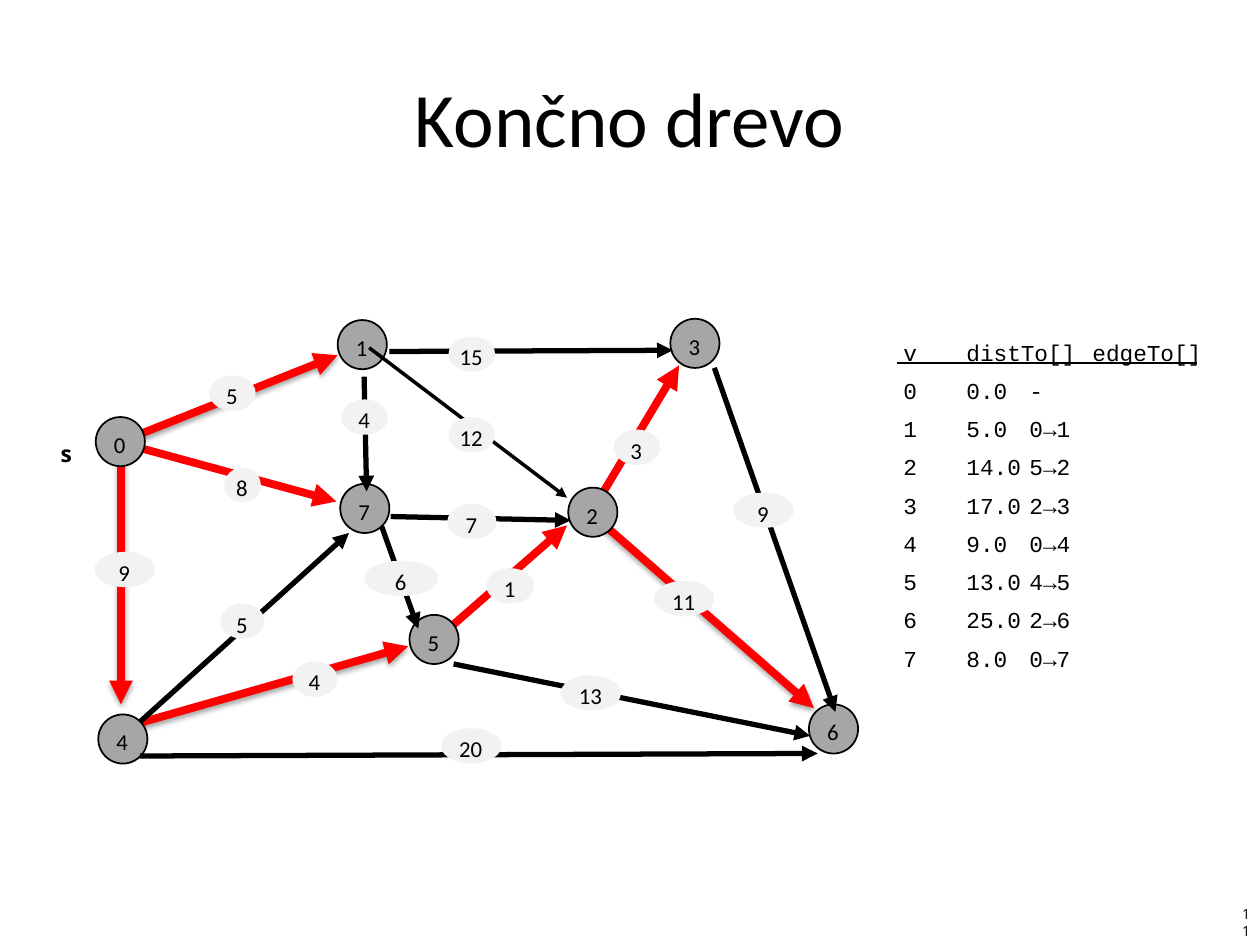
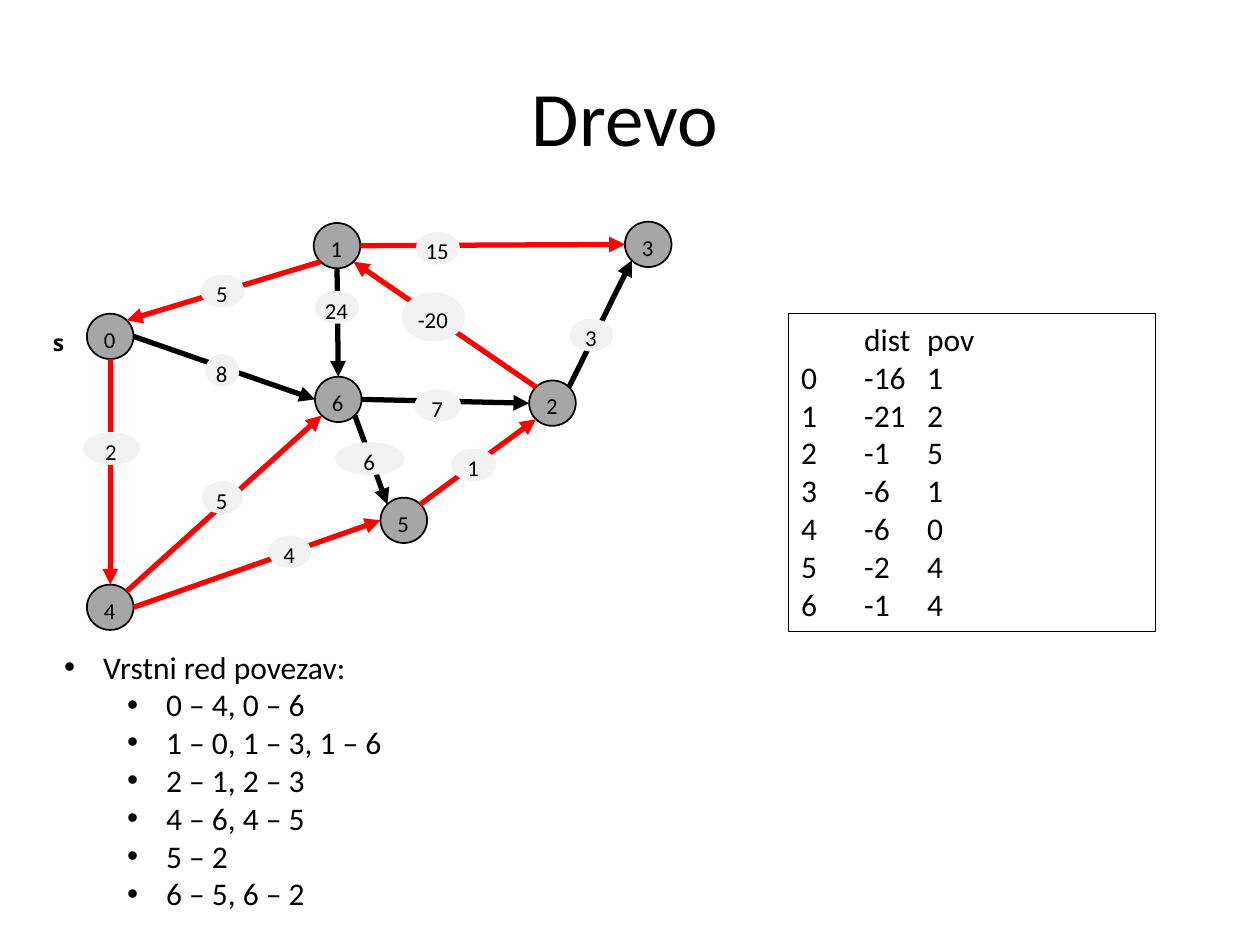
"""Build two slides that show shortest-path trees of weighted directed graphs."""
from math import sqrt
from lxml import etree
from pptx import Presentation, util as u
from pptx.dml.color import RGBColor
from pptx.enum import shapes, text
from pptx.oxml.ns import qn

COLOURS = {"ink": "000000", "tree": "FF0000", "node": "A6A6A6", "weight": "F2F2F2"}
BODY, MONO, SMALL = "Calibri", "Courier New", "Open Sans"
ALIGN, ANCHOR = text.PP_ALIGN, text.MSO_ANCHOR
DEFAULT_INSETS = (0.1, 0.05, 0.1, 0.05)
TIGHT_INSETS = (0, 0, 0.05, 0)
HANGING = 0.31
DIAGONAL = sqrt(0.5)
SITES = {
    "top": (0, 0, -1), "top left": (1, -DIAGONAL, -DIAGONAL),
    "left": (2, -1, 0), "bottom left": (3, -DIAGONAL, DIAGONAL),
    "bottom": (4, 0, 1), "bottom right": (5, DIAGONAL, DIAGONAL),
    "right": (6, 1, 0), "top right": (7, DIAGONAL, -DIAGONAL),
}

FINAL = {
    "title": ("Končno drevo", 0.5, 0.3),
    "start": (0.44, 3.4),
    "node_size": (0.39, 0.39),
    "nodes": {"0": (0.76, 3.31), "1": (2.68, 2.54), "2": (4.51, 3.87), "3": (5.32, 2.53),
              "4": (0.78, 5.67), "5": (3.25, 4.88), "6": (6.42, 5.59), "7": (2.7, 3.84)},
    "weight_height": 0.28,
    "weights": [("6", 2.89, 4.45, 0.59), ("9", 0.75, 4.38, 0.48), ("8", 1.78, 3.71, 0.29),
                ("4", 2.32, 5.25, 0.36), ("5", 1.75, 4.79, 0.35), ("7", 3.55, 4, 0.39),
                ("1", 3.86, 4.51, 0.38), ("5", 1.66, 2.98, 0.37), ("4", 2.71, 3.17, 0.37),
                ("15", 3.56, 2.67, 0.37), ("3", 4.87, 3.41, 0.37), ("12", 3.56, 3.31, 0.37),
                ("20", 3.5, 5.78, 0.48), ("13", 4.45, 5.36, 0.48), ("11", 5.19, 4.61, 0.48),
                ("9", 5.82, 3.91, 0.48)],
}
TREE_ARROWS = [
    ((4.66, 4.12), (5.39, 2.9), False), ((4.8, 4.17), (6.46, 5.62), True),
    ((0.96, 3.62), (0.96, 5.59), True), ((0.98, 3.52), (2.67, 3.98), False),
    ((1, 3.49), (2.68, 2.82), True), ((3.47, 5.07), (4.5, 4.17), False),
    ((0.96, 5.78), (3.24, 5.13), True),
]
OTHER_ARROWS = [
    ((2.93, 2.76), (4.5, 3.95), 2), ((2.89, 2.99), (2.91, 3.9), 3),
    ((3.1, 4.1), (4.53, 4.13), 3), ((3.03, 4.18), (3.32, 4.99), 3),
    ((3.6, 5.27), (6.43, 5.84), 3), ((1.11, 5.73), (2.77, 4.23), 3),
    ((1.11, 6), (6.49, 5.98), 3), ((5.67, 2.92), (6.63, 5.65), 3),
    ((3.09, 2.79), (5.34, 2.78), 3),
]
PATH_HEADER = ("v", "distTo[]", "edgeTo[]")
PATHS = [("0", "0.0", "-"), ("1", "5.0", "0→1"), ("2", "14.0", "5→2"), ("3", "17.0", "2→3"),
         ("4", "9.0", "0→4"), ("5", "13.0", "4→5"), ("6", "25.0", "2→6"), ("7", "8.0", "0→7")]
HEADER_STOPS = [(4, "l"), (13, "l")]
PATH_STOPS = [(9, "r"), (17.5, "ctr")]
CHARACTER = 0.6 * 13 / 72

TREE = {
    "title": ("Drevo", 0.46, 0.29),
    "start": (0.38, 2.52),
    "node_size": (0.37, 0.36),
    "nodes": {"0": (0.69, 2.49), "1": (2.49, 1.77), "2": (4.2, 3.02), "3": (4.96, 1.76),
              "4": (0.69, 4.64), "5": (3.02, 3.95), "6": (2.5, 2.99)},
    "weight_height": 0.26,
    "weights": [("6", 2.66, 3.51, 0.55), ("2", 0.66, 3.43, 0.45), ("8", 1.63, 2.81, 0.27),
                ("4", 2.13, 4.25, 0.34), ("5", 1.6, 3.82, 0.33), ("7", 3.29, 3.09, 0.37),
                ("1", 3.58, 3.56, 0.36), ("5", 1.59, 2.18, 0.35), ("24", 2.5, 2.31, 0.35),
                ("15", 3.3, 1.84, 0.35), ("3", 4.52, 2.53, 0.35), ("-20", 3.19, 2.32, 0.5, 0.39)],
}
JOINED_ARROWS = [
    ("0", "right", "6", "left", "ink"), ("2", "top right", "3", "bottom left", "ink"),
    ("2", "top left", "1", "bottom right", "tree"), ("1", "bottom", "6", "top", "ink"),
    ("6", "right", "2", "left", "ink"), ("6", "bottom right", "5", "top left", "ink"),
    ("5", "top right", "2", "bottom left", "tree"), ("4", "right", "5", "left", "tree"),
    ("4", "top right", "6", "bottom left", "tree"), ("0", "bottom", "4", "top", "tree"),
    ("1", "right", "3", "left", "tree"), ("1", "bottom left", "0", "top right", "tree"),
]
ORDER_TITLE = "Vrstni red povezav:"
ORDER = ["0 – 4, 0 – 6", "1 – 0, 1 – 3, 1 – 6", "2 – 1, 2 – 3", "4 – 6, 4 – 5", "5 – 2", "6 – 5, 6 – 2"]
DISTANCES = [("", "dist", "pov"), ("0", "-16", "1"), ("1", "-21", "2"), ("2", "-1", "5"),
             ("3", "-6", "1"), ("4", "-6", "0"), ("5", "-2", "4"), ("6", "-1", "4")]


def colour(name):
    return RGBColor.from_string(COLOURS[name])


def child(parent, tag, **attributes):
    return etree.SubElement(parent, qn(tag), {key: str(value) for key, value in attributes.items()})


def write(shape, lines, size, font=BODY, align=ALIGN.LEFT, anchor=ANCHOR.TOP,
          insets=DEFAULT_INSETS, spacing=None, bold=False, wrap=True):
    frame = shape.text_frame
    frame.word_wrap, frame.vertical_anchor = wrap, anchor
    frame.margin_left, frame.margin_top, frame.margin_right, frame.margin_bottom = map(u.Inches, insets)
    for index, line in enumerate(lines):
        paragraph = frame.add_paragraph() if index else frame.paragraphs[0]
        paragraph.alignment = align
        if spacing:
            paragraph.line_spacing = spacing
        run = paragraph.add_run()
        run.text = line
        run.font.size, run.font.name, run.font.bold = u.Pt(size), font, bold
        run.font.color.rgb = colour("ink")
    return frame.paragraphs


def add_text(slide, box, lines, size, **style):
    shape = slide.shapes.add_textbox(*map(u.Inches, box))
    return shape, write(shape, lines, size, **style)


def indent(paragraph, left, hanging=0.0):
    properties = paragraph._p.get_or_add_pPr()
    properties.set("marL", str(u.Inches(left)))
    properties.set("indent", str(-u.Inches(hanging)))
    return properties


def add_ellipse(slide, label, box, fill, outlined):
    shape = slide.shapes.add_shape(shapes.MSO_SHAPE.OVAL, *map(u.Inches, box))
    shape.shadow.inherit = False
    shape.fill.solid()
    shape.fill.fore_color.rgb = colour(fill)
    if outlined:
        shape.line.color.rgb = colour("ink")
        shape.line.width = u.Pt(1)
    else:
        shape.line.fill.background()
    write(shape, [label], 13, align=ALIGN.CENTER, anchor=ANCHOR.MIDDLE,
          insets=(0, 0, 0.01, 0), spacing=1.2)
    return shape


def add_line(slide, start, end, width, name="ink", arrow=True, shadow=False):
    connector = slide.shapes.add_connector(
        shapes.MSO_CONNECTOR.STRAIGHT, *map(u.Inches, (*start, *end)))
    connector.line.color.rgb = colour(name)
    connector.line.width = u.Pt(width)
    properties = connector._element.spPr
    if arrow:
        child(properties.find(qn("a:ln")), "a:tailEnd", type="triangle")
    effects = child(properties, "a:effectLst")
    if shadow:
        outer = child(effects, "a:outerShdw", blurRad=u.Pt(3.1), dist=u.Pt(1.8),
                      dir=90 * 60000, rotWithShape=0)
        child(child(outer, "a:srgbClr", val=COLOURS["ink"]), "a:alpha", val=35000)
    return connector


def add_nodes(slide, graph):
    return {label: add_ellipse(slide, label, (*place, *graph["node_size"]), "node", True)
            for label, place in graph["nodes"].items()}


def add_weights(slide, graph):
    for label, left, top, width, *height in graph["weights"]:
        box = (left, top, width, *(height or [graph["weight_height"]]))
        add_ellipse(slide, label, box, "weight", False)


def start_slide(presentation, graph):
    slide = presentation.slides.add_slide(presentation.slide_layouts[6])
    title, left, top = graph["title"]
    add_text(slide, (left, top, 9, 1.25), [title], 44, align=ALIGN.CENTER, anchor=ANCHOR.MIDDLE)
    _, paragraphs = add_text(slide, (*graph["start"], 0.19, 0.3), ["s"], 13, font=SMALL,
                             insets=TIGHT_INSETS, spacing=1.4, bold=True, wrap=False)
    indent(paragraphs[0], 0.04)
    return slide


def site_point(graph, label, side):
    _, across, down = SITES[side]
    (left, top), (width, height) = graph["nodes"][label], graph["node_size"]
    return left + width / 2 * (1 + across), top + height / 2 * (1 + down)


def build_final(presentation):
    slide = start_slide(presentation, FINAL)
    add_text(slide, (9.76, 7.21, 0.24, 0.22), ["11"], 8, font=SMALL,
             align=ALIGN.RIGHT, anchor=ANCHOR.MIDDLE)
    for start, end, shadow in TREE_ARROWS:
        add_line(slide, start, end, 4.5, "tree", shadow=shadow)
    add_nodes(slide, FINAL)
    for start, end, width in OTHER_ARROWS:
        add_line(slide, start, end, width)
    add_weights(slide, FINAL)
    add_line(slide, (7.12, 2.88), (9.5, 2.88), 1, arrow=False)
    lines = ["\t".join(row) for row in [PATH_HEADER, *PATHS]]
    _, paragraphs = add_text(slide, (7.13, 2.6, 2.61, 2.46), lines, 13, font=MONO,
                             insets=TIGHT_INSETS, spacing=1.4)
    for index, paragraph in enumerate(paragraphs):
        stops = child(indent(paragraph, 0.04), "a:tabLst")
        for column, align in PATH_STOPS if index else HEADER_STOPS:
            child(stops, "a:tab", pos=u.Inches(0.04 + column * CHARACTER), algn=align)


def build_tree(presentation):
    slide = start_slide(presentation, TREE)
    nodes = add_nodes(slide, TREE)
    for source, source_side, target, target_side, name in JOINED_ARROWS:
        connector = add_line(slide, site_point(TREE, source, source_side),
                             site_point(TREE, target, target_side), 3, name)
        joints = connector._element.find(".//" + qn("p:cNvCxnSpPr"))
        child(joints, "a:stCxn", id=nodes[source].shape_id, idx=SITES[source_side][0])
        child(joints, "a:endCxn", id=nodes[target].shape_id, idx=SITES[target_side][0])
    add_weights(slide, TREE)
    _, paragraphs = add_text(slide, (0.41, 5.09, 4.35, 2.22), [ORDER_TITLE, *ORDER], 18)
    for index, paragraph in enumerate(paragraphs):
        paragraph.level = min(index, 1)
        properties = indent(paragraph, HANGING + 0.5 * paragraph.level, HANGING)
        child(properties, "a:buFont", typeface="Arial")
        child(properties, "a:buChar", char="•")
    table, _ = add_text(slide, (6.26, 2.49, 2.91, 2.52), ["\t".join(row) for row in DISTANCES], 18)
    table.line.color.rgb = colour("ink")
    table.line.width = u.Pt(0.75)


def main():
    presentation = Presentation()
    presentation.slide_width, presentation.slide_height = u.Inches(10), u.Inches(7.5)
    build_final(presentation)
    build_tree(presentation)
    presentation.save("out.pptx")


if __name__ == "__main__":
    main()
